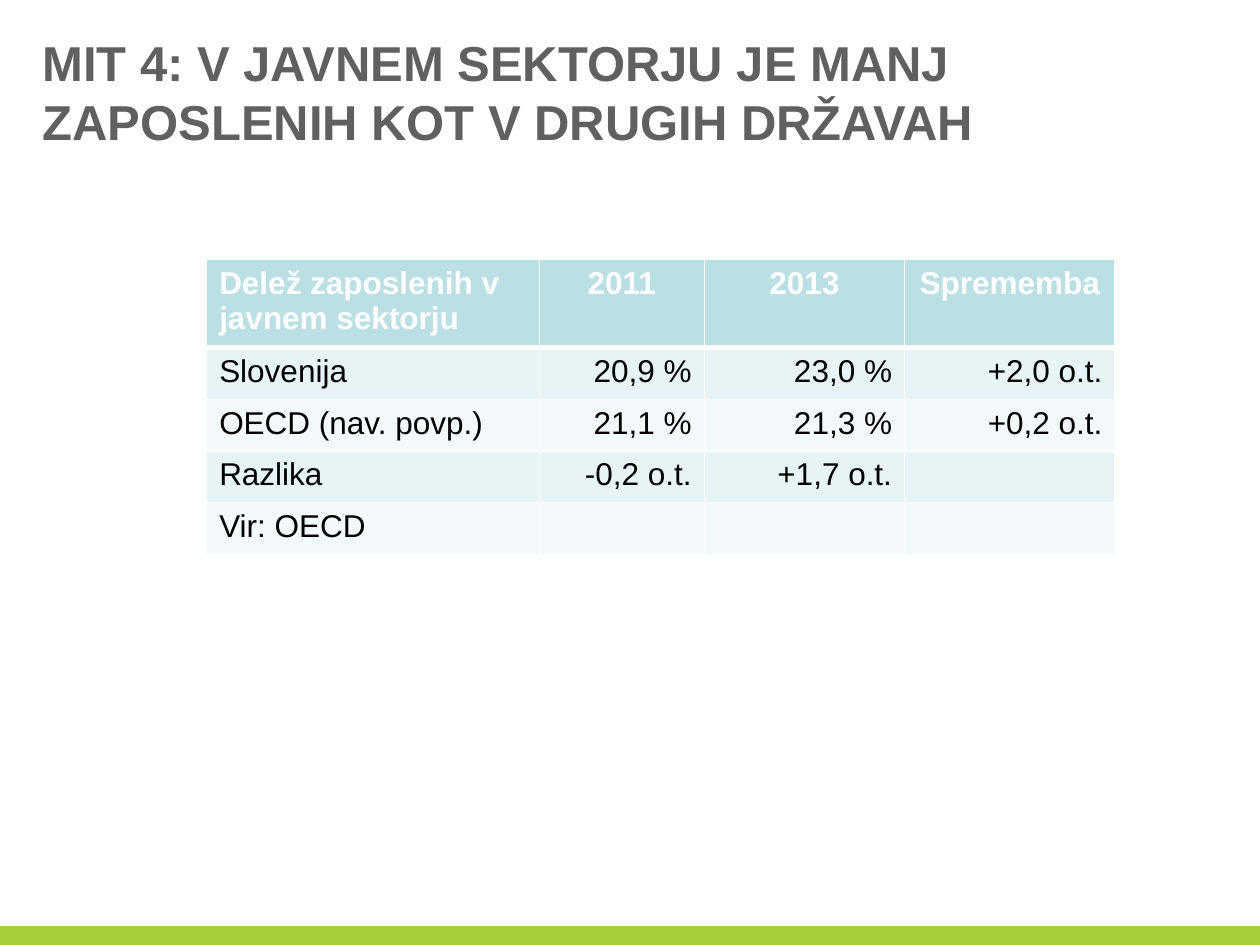
import dataclasses

import lxml.etree
import pptx
import pptx.dml.color
import pptx.enum.shapes
import pptx.enum.text
import pptx.oxml.ns
import pptx.util

Inches = pptx.util.Inches
Pt = pptx.util.Pt
Align = pptx.enum.text.PP_ALIGN


@dataclasses.dataclass(frozen=True)
class Theme:
    font: str = "Arial"
    title_size: int = 28
    table_size: int = 18
    title: str = "606060"
    footer: str = "A6CE39"
    header: str = "BBE0E3"
    bands: tuple = ("E7F3F4", "F3F9FA")
    white: str = "FFFFFF"
    black: str = "000000"


THEME = Theme()

HEADINGS = ("Delež zaposlenih v javnem sektorju", "2011", "2013", "Sprememba")
SHARES = (
    ("Slovenija", "20,9 %", "23,0 %", "+2,0 o.t."),
    ("OECD (nav. povp.)", "21,1 %", "21,3 %", "+0,2 o.t."),
    ("Razlika", "-0,2 o.t.", "+1,7 o.t.", ""),
    ("Vir: OECD", "", "", ""),
)
COLUMN_WIDTHS = (2.64, 1.31, 1.59, 1.67)
HEADER_HEIGHT = 0.65
ROW_HEIGHT = 0.41


def rgb(color):
    return pptx.dml.color.RGBColor.from_string(color)


def style(paragraph, size, color, bold, align):
    paragraph.alignment = align
    paragraph.font.name = THEME.font
    paragraph.font.size = Pt(size)
    paragraph.font.bold = bold
    paragraph.font.color.rgb = rgb(color)


def add_border(cell, side, color, width):
    properties = cell._tc.get_or_add_tcPr()
    qn = pptx.oxml.ns.qn
    line = lxml.etree.Element(qn(f"a:{side}"), w=str(Pt(width)))
    fill = lxml.etree.SubElement(line, qn("a:solidFill"))
    lxml.etree.SubElement(fill, qn("a:srgbClr"), val=color)
    properties.insert(len(properties) - 1, line)


def fill_cell(cell, text, fill, color, bold, align, bottom_width):
    cell.fill.solid()
    cell.fill.fore_color.rgb = rgb(fill)
    cell.text = text
    style(cell.text_frame.paragraphs[0], THEME.table_size, color, bold, align)
    for side, width in (("lnL", 1), ("lnR", 1), ("lnT", 1), ("lnB", bottom_width)):
        add_border(cell, side, THEME.white, width)


def add_title(slide, left, top, width, height):
    frame = slide.shapes.add_textbox(left, top, width, height).text_frame
    frame.word_wrap = True
    frame.vertical_anchor = pptx.enum.text.MSO_ANCHOR.MIDDLE
    frame.text = "MIT 4: V JAVNEM SEKTORJU JE MANJ ZAPOSLENIH KOT V DRUGIH DRŽAVAH"
    frame.margin_bottom = Inches(0.51)
    style(frame.paragraphs[0], THEME.title_size, THEME.title, True, Align.LEFT)


def add_share_table(slide, left, top, width, height):
    table = slide.shapes.add_table(
        len(SHARES) + 1, len(HEADINGS), left, top, width, height
    ).table
    for column, column_width in zip(table.columns, COLUMN_WIDTHS):
        column.width = Inches(column_width)
    for index, row in enumerate(table.rows):
        row.height = Inches(ROW_HEIGHT if index else HEADER_HEIGHT)

    for column, heading in enumerate(HEADINGS):
        align = Align.CENTER if column else Align.LEFT
        fill_cell(table.cell(0, column), heading, THEME.header, THEME.white,
                  True, align, 3)
    for row, shares in enumerate(SHARES, start=1):
        band = THEME.bands[(row - 1) % 2]
        for column, share in enumerate(shares):
            align = Align.RIGHT if column else Align.LEFT
            fill_cell(table.cell(row, column), share, band, THEME.black,
                      False, align, 1)
    for column in range(len(HEADINGS)):
        cell = table.cell(1, column)
        top_line = cell._tc.tcPr.find(pptx.oxml.ns.qn("a:lnT"))
        top_line.set("w", str(Pt(3)))


def add_footer(slide, left, top, width, height):
    bar = slide.shapes.add_shape(
        pptx.enum.shapes.MSO_SHAPE.RECTANGLE, left, top, width, height
    )
    bar.shadow.inherit = False
    bar.fill.solid()
    bar.fill.fore_color.rgb = rgb(THEME.footer)
    bar.line.fill.background()


def main():
    deck = pptx.Presentation()
    deck.slide_width = Inches(10)
    deck.slide_height = Inches(7.5)
    slide = deck.slides.add_slide(deck.slide_layouts[6])
    slide.background.fill.solid()
    slide.background.fill.fore_color.rgb = rgb(THEME.white)
    add_footer(slide, Inches(0), Inches(7.35), Inches(10), Inches(0.15))
    add_title(slide, Inches(0.24), Inches(0.6), Inches(9.45), Inches(0.71))
    add_share_table(slide, Inches(1.64), Inches(2.06), Inches(sum(COLUMN_WIDTHS)),
                    Inches(HEADER_HEIGHT + ROW_HEIGHT * len(SHARES)))
    deck.save("out.pptx")


if __name__ == "__main__":
    main()
